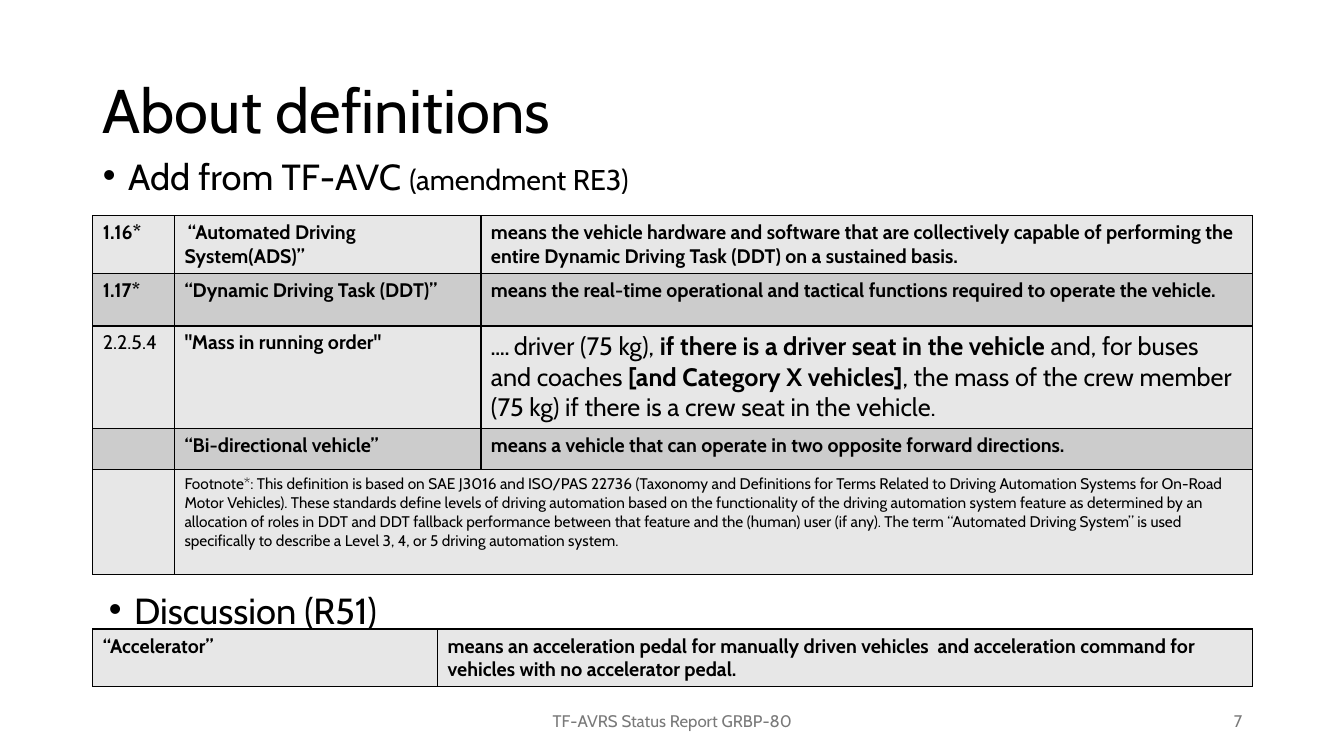
from lxml import etree
from pptx import Presentation
from pptx.dml.color import RGBColor
from pptx.enum import text as t
from pptx.oxml import ns
from pptx.util import Inches, Pt

BLACK = RGBColor(0x00, 0x00, 0x00)
GREY = RGBColor(0x79, 0x79, 0x79)
BANDS = (RGBColor(0xE7, 0xE7, 0xE7), RGBColor(0xCC, 0xCC, 0xCC))
LEFT, WIDTH = 0.92, 11.5


def write(tf, *runs, size=14, bold=False, color=BLACK, font="Cabin",
          align=t.PP_ALIGN.LEFT, spacing=1.0):
    """Fill the first paragraph; a run is a text or (text, overrides)."""
    p = tf.paragraphs[0]
    p.alignment = align
    p.line_spacing = spacing
    p.space_before = Pt(0)
    for run in runs:
        content, own = (run, {}) if isinstance(run, str) else run
        r = p.add_run()
        r.text = content
        r.font.name = font
        r.font.size = Pt(own.get("size", size))
        r.font.bold = own.get("bold", bold)
        r.font.color.rgb = color
    return p


class Deck:
    def __init__(self):
        self.prs = Presentation()
        self.prs.slide_width = Inches(13.33)
        self.prs.slide_height = Inches(7.5)
        # Two Content layout: a title and two list placeholders
        self.s = self.prs.slides.add_slide(self.prs.slide_layouts[3])

    def place(self, idx, left, top, width, height):
        sp = self.s.placeholders[idx]
        sp.left, sp.top = Inches(left), Inches(top)
        sp.width, sp.height = Inches(width), Inches(height)
        tf = sp.text_frame
        tf.word_wrap = True
        tf.auto_size = t.MSO_AUTO_SIZE.NONE
        return tf

    def title(self, content, *box):
        tf = self.place(0, *box)
        tf.vertical_anchor = t.MSO_ANCHOR.MIDDLE
        write(tf, content, size=44, spacing=0.9)

    def bullet(self, idx, *runs, left, top):
        tf = self.place(idx, left, top, WIDTH, 0.45)
        tf.vertical_anchor = t.MSO_ANCHOR.TOP
        pPr = tf.paragraphs[0]._p.get_or_add_pPr()
        pPr.set("marL", str(Inches(0.25)))
        pPr.set("indent", str(Inches(-0.25)))
        etree.SubElement(pPr, ns.qn("a:buFont")).set("typeface", "Arial")
        etree.SubElement(pPr, ns.qn("a:buChar")).set("char", "•")
        write(tf, *runs, size=25.9, spacing=0.7)

    def label(self, content, left, width, align):
        sp = self.s.shapes.add_textbox(
            Inches(left), Inches(6.95), Inches(width), Inches(0.4))
        tf = sp.text_frame
        tf.word_wrap = True
        tf.vertical_anchor = t.MSO_ANCHOR.MIDDLE
        write(tf, content, size=12, color=GREY, align=align)

    def border(self, cell):
        tcPr = cell._tc.get_or_add_tcPr()
        for side in ("lnL", "lnR", "lnT", "lnB"):
            ln = etree.SubElement(tcPr, ns.qn("a:" + side), w=str(Pt(1)))
            fill = etree.SubElement(ln, ns.qn("a:solidFill"))
            etree.SubElement(fill, ns.qn("a:srgbClr"), val=str(BLACK))

    def table(self, top, widths, heights, rows):
        """Each cell is a list of runs; None joins it to the cell on its left."""
        frame = self.s.shapes.add_table(
            len(rows), len(widths), Inches(LEFT), Inches(top),
            Inches(WIDTH), Inches(sum(heights)))
        tbl = frame.table
        for col, width in zip(tbl.columns, widths):
            col.width = Inches(width)
        for i, (height, row) in enumerate(zip(heights, rows)):
            tbl.rows[i].height = Inches(height)
            for j, runs in enumerate(row):
                cell = tbl.cell(i, j)
                self.border(cell)
                cell.fill.solid()
                cell.fill.fore_color.rgb = BANDS[i % 2]
                if runs is None:
                    tbl.cell(i, j - 1).merge(cell)
                elif runs:
                    write(cell.text_frame, *runs, bold=True)


def main():
    deck = Deck()
    plain = {"bold": False}
    large = {"size": 18, "bold": False}
    large_bold = {"size": 18}

    # Heading and first topic
    deck.title("About definitions", LEFT, 0.4, WIDTH, 1.45)
    deck.bullet(1, "Add from TF-AVC ", ("(amendment RE3)", {"size": 20.4}),
                left=LEFT, top=1.6)

    # Definitions
    footnote = (
        "Footnote*: This definition is based on SAE J3016 and ISO/PAS 22736 "
        "(Taxonomy and Definitions for Terms Related to Driving Automation "
        "Systems for On-Road Motor Vehicles). These standards define levels of "
        "driving automation based on the functionality of the driving automation "
        "system feature as determined by an allocation of roles in DDT and DDT "
        "fallback performance between that feature and the (human) user (if any). "
        "The term “Automated Driving System” is used specifically to describe a "
        "Level 3, 4, or 5 driving automation system.")
    deck.table(2.14, (0.81, 3.04, 7.65), (0.52, 0.52, 0.92, 0.41, 1.04), [
        [["1.16*"],
         [(" ", {"size": 11}), "“Automated Driving System(ADS)”"],
         ["means the vehicle hardware and software that are collectively capable "
          "of performing the entire Dynamic Driving Task (DDT) on a sustained "
          "basis."]],
        [["1.17*"],
         ["“Dynamic Driving Task (DDT)”"],
         ["means the real-time operational and tactical functions required to "
          "operate the vehicle."]],
        [[("2.2.5.4", plain)],
         ['"Mass in running order"'],
         ["…. ", ("driver (75 kg), ", large),
          ("if there is a driver seat in the vehicle", large_bold),
          (" and, for buses and coaches ", large),
          ("[and Category X vehicles]", large_bold),
          (", the mass of the crew member (75 kg) if there is a crew seat in "
           "the vehicle.", large)]],
        [[],
         ["“Bi-directional vehicle”"],
         ["means a vehicle that can operate in two opposite forward directions."]],
        [[], [(footnote, {"size": 11, "bold": False})], None],
    ])

    # Second topic
    deck.table(6.24, (3.42, 8.08), (0.57,), [
        [["“Accelerator”"],
         ["means an acceleration pedal for manually driven vehicles  and "
          "acceleration command for vehicles with no accelerator pedal."]],
    ])
    deck.bullet(2, "Discussion (R51)", left=0.98, top=5.9)

    # Footer
    deck.label("TF-AVRS Status Report GRBP-80", 4.42, 4.5, t.PP_ALIGN.CENTER)
    deck.label("7", 9.42, 3, t.PP_ALIGN.RIGHT)

    deck.prs.save("out.pptx")


if __name__ == "__main__":
    main()
